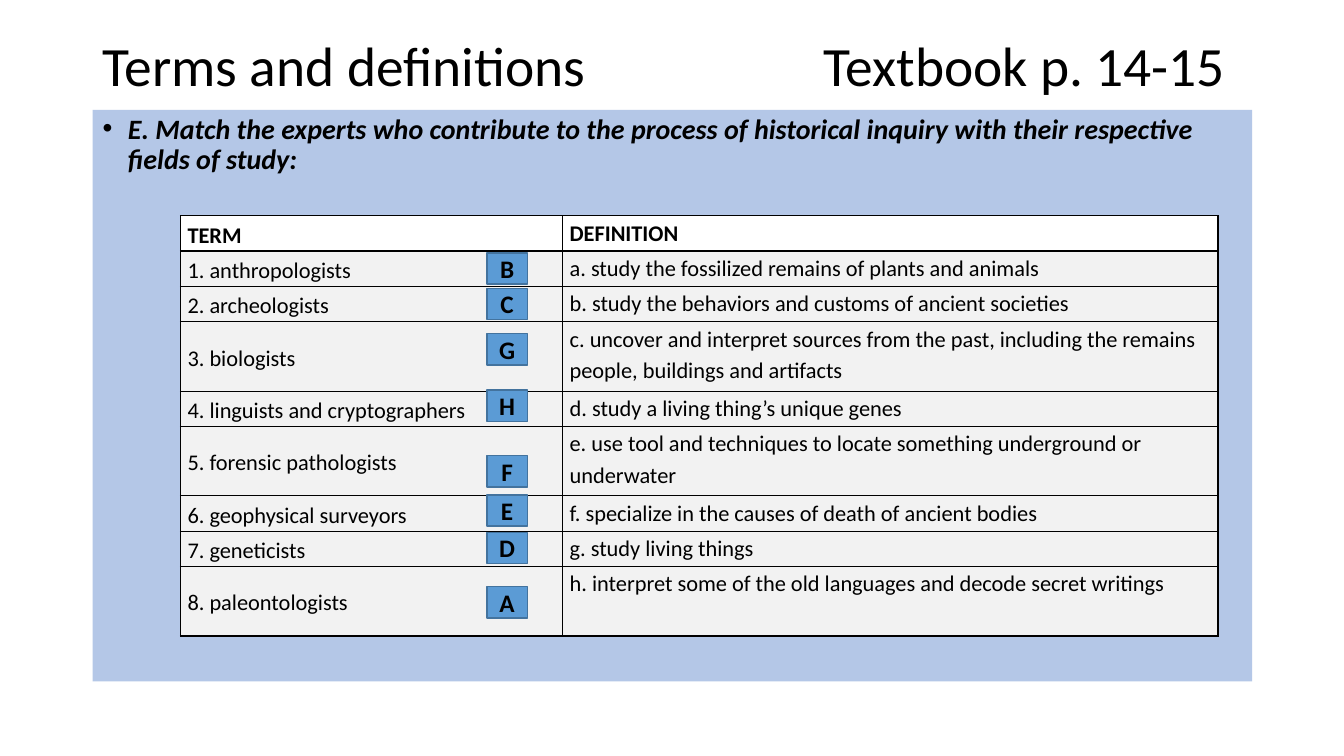
"""Build the slide that matches history experts with their fields of study."""
from dataclasses import dataclass
from typing import Any

from lxml.etree import SubElement
from pptx import Presentation
from pptx.dml.color import RGBColor as RGB
from pptx.enum.shapes import MSO_SHAPE as SHAPE
from pptx.enum.text import MSO_ANCHOR as ANCHOR, PP_ALIGN as ALIGN
from pptx.oxml.ns import qn
from pptx.util import Emu, Pt

PX = 9144
COLORS = {"ink": "000000", "panel": "B4C7E7", "head": "FFFFFF", "row": "F2F2F2",
          "badge": "5B9BD5", "edge": "43739E"}
FONTS = {
    "title": {"size": Pt(39.6)},
    "task": {"size": Pt(20), "bold": True, "italic": True},
    "head": {"size": Pt(16), "bold": True},
    "row": {"size": Pt(16), "bold": False},
    "badge": {"size": Pt(18), "bold": True},
}
PARAS = {
    "title": {"line_spacing": 0.9, "alignment": ALIGN.LEFT},
    "task": {"line_spacing": 0.9, "space_before": Pt(10), "alignment": ALIGN.LEFT},
    "head": {"line_spacing": 1.15},
    "row": {"line_spacing": 1.15},
    "badge": {"alignment": ALIGN.CENTER},
}
INSETS = {"margin_left": Emu(7 * PX), "margin_right": Emu(7 * PX),
          "margin_top": 0, "margin_bottom": 0}


@dataclass
class Box:
    left: int
    top: int
    width: int
    height: int

    def emu(self) -> list[Emu]:
        return [Emu(v * PX) for v in (self.left, self.top, self.width, self.height)]


@dataclass
class Match:
    term: str
    definition: str
    height: int
    answer: str
    top: int


TITLE = Box(92, 40, 1150, 56)
PANEL = Box(92, 109, 1150, 567)
TABLE = Box(179, 214, 1029, 415)
COLS = (379, 650)
LOW, TALL = 35, 69
TAB, INDENT = 715, 25
BADGE_LEFT, BADGE_W, BADGE_H = 483, 40, 31
MATCHES = [
    Match("1. anthropologists",
          "a. study the fossilized remains of plants and animals", LOW, "B", 251),
    Match("2. archeologists",
          "b. study the behaviors and customs of ancient societies", LOW, "C", 286),
    Match("3. biologists",
          "c. uncover and interpret sources from the past, including the remains "
          "people, buildings and artifacts", TALL, "G", 331),
    Match("4. linguists and cryptographers",
          "d. study a living thing’s unique genes", LOW, "H", 387),
    Match("5. forensic pathologists",
          "e. use tool and techniques to locate something underground or underwater",
          TALL, "F", 452),
    Match("6. geophysical surveyors",
          "f. specialize in the causes of death of ancient bodies", LOW, "E", 491),
    Match("7. geneticists", "g. study living things", LOW, "D", 528),
    Match("8. paleontologists",
          "h. interpret some of the old languages and decode secret writings",
          TALL, "A", 582),
]


def apply(obj: Any, values: dict) -> None:
    for name, value in values.items():
        setattr(obj, name, value)


def paint(fill: Any, color: str) -> None:
    fill.solid()
    fill.fore_color.rgb = RGB.from_string(COLORS[color])


def write(tf: Any, text: str, style: str) -> Any:
    tf.word_wrap = True
    p = tf.paragraphs[0]
    apply(p, PARAS[style])
    r = p.add_run()
    r.text = text
    apply(r.font, {"name": "Calibri", **FONTS[style]})
    r.font.color.rgb = RGB.from_string(COLORS["ink"])
    return p


def add_rect(s: Any, box: Box, color: str) -> Any:
    sp = s.shapes.add_shape(SHAPE.RECTANGLE, *box.emu())
    sp.shadow.inherit = False
    paint(sp.fill, color)
    sp.line.fill.background()
    return sp


def add_title(s: Any) -> None:
    tf = s.shapes.add_textbox(*TITLE.emu()).text_frame
    tf.vertical_anchor = ANCHOR.MIDDLE
    p = write(tf, "Terms and definitions\tTextbook p. 14-15", "title")
    tabs = SubElement(p._p.get_or_add_pPr(), qn("a:tabLst"))
    SubElement(tabs, qn("a:tab"), pos=str(TAB * PX), algn="l")


def add_task(s: Any) -> None:
    tf = add_rect(s, PANEL, "panel").text_frame
    tf.vertical_anchor = ANCHOR.TOP
    p = write(tf, "E. Match the experts who contribute to the process of historical "
              "inquiry with their respective fields of study:", "task")
    pr = p._p.get_or_add_pPr()
    pr.set("marL", str(INDENT * PX))
    pr.set("indent", str(-INDENT * PX))
    SubElement(pr, qn("a:buFont"), typeface="Arial")
    SubElement(pr, qn("a:buChar"), char="•")


def add_borders(cell: Any) -> None:
    pr = cell._tc.get_or_add_tcPr()
    for side in "LRTB":
        ln = SubElement(pr, qn(f"a:ln{side}"), w=str(Pt(1)))
        fill = SubElement(ln, qn("a:solidFill"))
        SubElement(fill, qn("a:srgbClr"), val=COLORS["ink"])


def add_match_table(s: Any) -> None:
    rows = [("TERM", "DEFINITION", LOW)]
    rows += [(m.term, m.definition, m.height) for m in MATCHES]
    tbl = s.shapes.add_table(len(rows), len(COLS), *TABLE.emu()).table
    apply(tbl, {"first_row": False, "horz_banding": False})
    for col, width in zip(tbl.columns, COLS):
        col.width = Emu(width * PX)
    for i, (*texts, height) in enumerate(rows):
        tbl.rows[i].height = Emu(height * PX)
        style = "row" if i else "head"
        for j, (text, anchor) in enumerate(zip(texts, (ANCHOR.MIDDLE, ANCHOR.TOP))):
            cell = tbl.cell(i, j)
            apply(cell, {"vertical_anchor": anchor, **INSETS})
            add_borders(cell)
            paint(cell.fill, style)
            write(cell.text_frame, text, style)


def add_badge(s: Any, match: Match) -> None:
    sp = add_rect(s, Box(BADGE_LEFT, match.top, BADGE_W, BADGE_H), "badge")
    paint(sp.line.fill, "edge")
    sp.line.width = Pt(1)
    apply(sp.text_frame, {**INSETS, "vertical_anchor": ANCHOR.MIDDLE})
    write(sp.text_frame, match.answer, "badge")


def main() -> None:
    prs = Presentation()
    apply(prs, {"slide_width": Emu(1333 * PX), "slide_height": Emu(750 * PX)})
    s = prs.slides.add_slide(prs.slide_layouts[6])
    add_title(s)
    add_task(s)
    add_match_table(s)
    for match in MATCHES:
        add_badge(s, match)
    prs.save("out.pptx")


if __name__ == "__main__":
    main()
